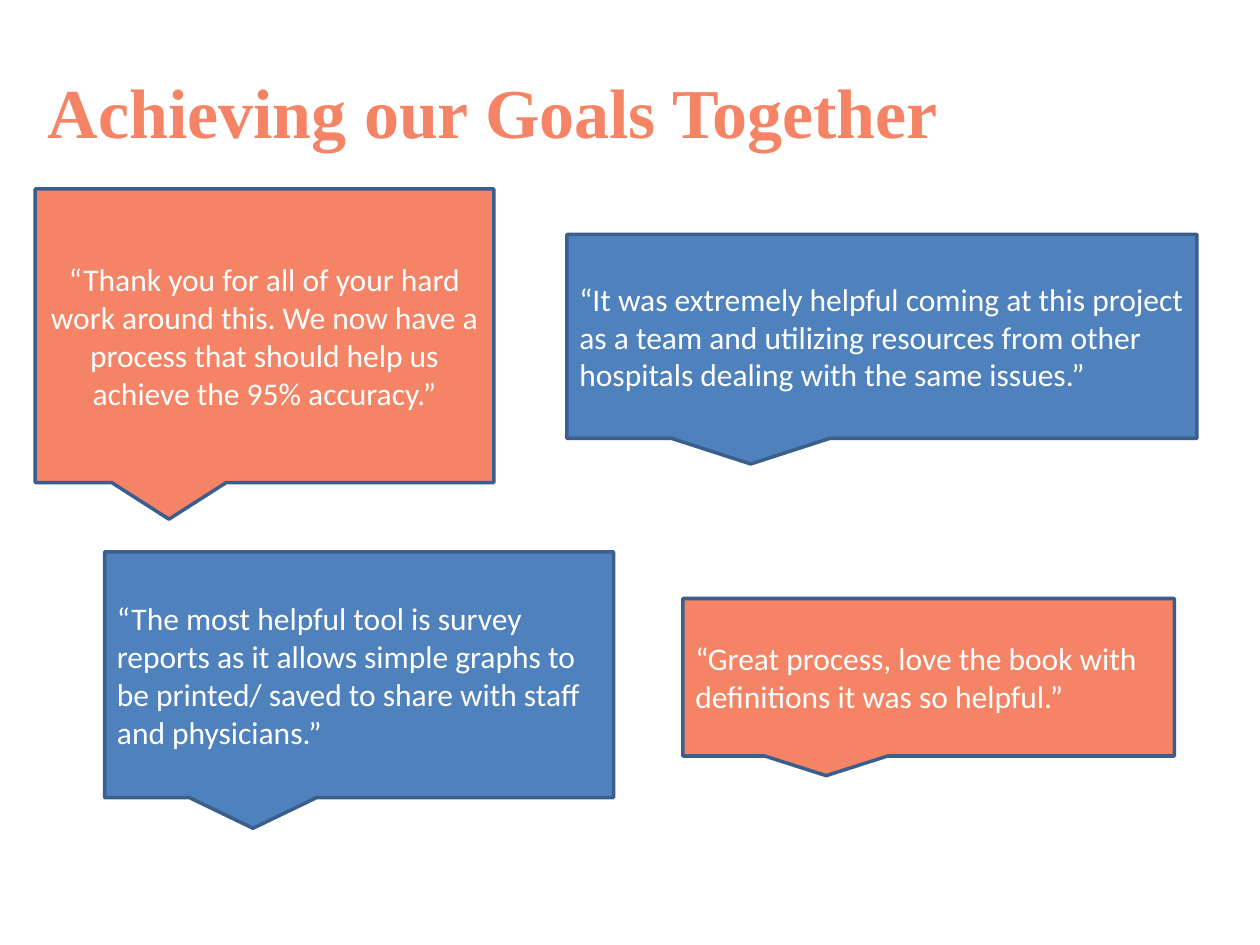
"""Build a slide with a title and four coloured quote callouts."""
from pptx import Presentation
from pptx.dml.color import RGBColor
from pptx.enum.shapes import MSO_SHAPE
from pptx.enum.text import MSO_ANCHOR, PP_ALIGN
from pptx.util import Pt

PX = 9144
CORAL, BLUE, OUTLINE, WHITE = "F58466", "4F81BD", "3A5F8C", "FFFFFF"


def color(hex_value):
    return RGBColor.from_string(hex_value)


def write(holder, text, font_name, size, hex_value, align, bold=False):
    frame = holder.text_frame
    frame.word_wrap = True
    frame.vertical_anchor = MSO_ANCHOR.MIDDLE
    frame.text = text
    paragraph = frame.paragraphs[0]
    paragraph.alignment = align
    font = paragraph.runs[0].font
    font.name, font.size, font.bold = font_name, Pt(size), bold
    font.color.rgb = color(hex_value)


presentation = Presentation()
presentation.slide_width, presentation.slide_height = 1000 * PX, 750 * PX
slide = presentation.slides.add_slide(presentation.slide_layouts[6])

title = slide.shapes.add_textbox(28 * PX, 25 * PX, 900 * PX, 125 * PX)
write(title, "Achieving our Goals Together", "Times New Roman", 40, CORAL, PP_ALIGN.LEFT, True)

quotes = [
    (28, 150, 364, 233, CORAL, PP_ALIGN.CENTER,
     "“Thank you for all of your hard work around this. We now have a process "
     "that should help us achieve the 95% accuracy.”"),
    (83, 438, 404, 195, BLUE, PP_ALIGN.LEFT,
     "“The most helpful tool is survey reports as it allows simple graphs to be "
     "printed/ saved to share with staff and physicians.”"),
    (542, 475, 390, 125, CORAL, PP_ALIGN.LEFT,
     "“Great process, love the book with definitions it was so helpful.”"),
    (450, 186, 500, 162, BLUE, PP_ALIGN.LEFT,
     "“It was extremely helpful coming at this project as a team and utilizing "
     "resources from other hospitals dealing with the same issues.”"),
]
for left, top, width, height, fill, align, quote in quotes:
    callout = slide.shapes.add_shape(
        MSO_SHAPE.RECTANGULAR_CALLOUT, left * PX, top * PX, width * PX, height * PX)
    callout.shadow.inherit = False
    callout.fill.solid()
    callout.fill.fore_color.rgb = color(fill)
    callout.line.color.rgb = color(OUTLINE)
    callout.line.width = Pt(2)
    write(callout, quote, "Calibri", 18, WHITE, align)

presentation.save("out.pptx")
